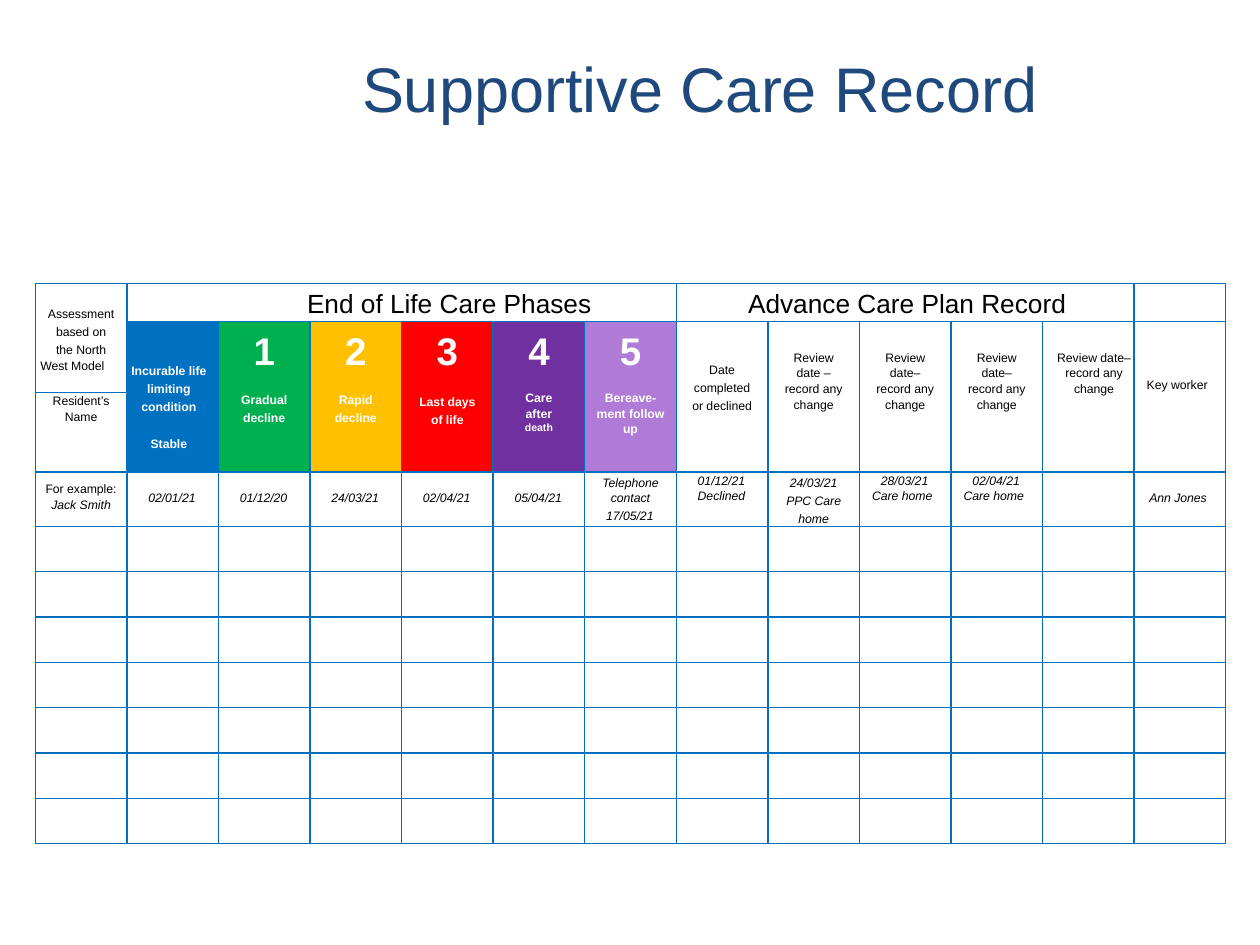
from lxml import etree
from pptx import Presentation
from pptx import util as u
from pptx.dml.color import RGBColor
from pptx.enum import text
from pptx.oxml.ns import qn

THEME = {
    "font": "Arial", "title": "1F497D", "ink": "000000", "white": "FFFFFF",
    "border": "006FC0", "title_size": 36, "band_size": 15,
    "number_size": 22, "body_size": 7, "small_size": 6,
}
LEFT, CENTER = text.PP_ALIGN.LEFT, text.PP_ALIGN.CENTER


def line(words, align=CENTER, left=0, right=None, spacing=1.15, before=0, **style):
    """One paragraph; a centred one is indented equally on both sides."""
    if right is None:
        right = left if align == CENTER else 0
    return {"words": words, "align": align, "left": left, "right": right,
            "spacing": spacing, "before": before, "style": style}


def phase(number, label, indent, spacing, before):
    """Phase number above its label."""
    white = {"color": THEME["white"], "bold": True}
    return [line(number, spacing=29.8, size=THEME["number_size"], **white),
            line(label, left=indent, spacing=spacing, before=before, **white)]


def review(label, left=0.11, right=0.11):
    return [line(label, left=left, right=right)]


def entry(words, left=0.17, **options):
    return line(words, LEFT, left, italic=True, **options)


# Content: (row, column, row span, column span, fill, top margin, paragraphs)
TITLE = "Supportive Care Record"
WHITE_BOLD = {"color": THEME["white"], "bold": True}
BAND = {"align": LEFT, "spacing": 20.4, "size": THEME["band_size"]}
HEADINGS = [
    (0, 0, 2, 1, None, 0, [line("Assessment based on", left=0.06, spacing=10.4),
                           line("the North", left=0.1, spacing=10.2),
                           line("West Model", LEFT, 0.04)]),
    (0, 1, 1, 6, None, 0, [line("End of Life Care Phases", left=1.43, **BAND)]),
    (0, 7, 1, 5, None, 0, [line("Advance Care Plan Record", left=0.57, **BAND)]),
    (2, 0, 1, 1, None, 0, [line("Resident’s", left=0.05), line("Name", left=0.1)]),
]
# Headings from the second column on, each two rows high: (fill, top margin, paragraphs)
COLUMN_HEADINGS = [
    ("0070C0", 0.31, [line("Incurable life limiting condition", right=0.06,
                           spacing=10.3, **WHITE_BOLD),
                      line("Stable", right=0.06, spacing=10.3, before=10.4, **WHITE_BOLD)]),
    ("00B050", 0, phase("1", "Gradual decline", 0.08, 10.3, 9.1)),
    ("FFC000", 0, phase("2", "Rapid decline", 0.09, 10.3, 9.1)),
    ("FF0000", 0, phase("3", "Last days of life", 0.12, 10.3, 10.3)),
    ("7030A0", 0, phase("4", ["Care after ", ("death", THEME["small_size"])], 0.2, 1.15, 9)),
    ("B07BD7", 0, phase("5", "Bereave-ment follow up", 0.08, 1.15, 9)),
    (None, 0.3, [line("Date completed or declined", left=0.1, spacing=10.3)]),
    (None, 0.22, review("Review date – record any change")),
    (None, 0.22, review("Review date– record any change")),
    (None, 0.22, review("Review date– record any change")),
    (None, 0.22, review("Review date– record any change", 0.09, 0)),
    (None, 0.44, [line("Key worker", LEFT, 0.1)]),
]
PHASE_DATES = ["02/01/21", "01/12/20", "24/03/21", "02/04/21", "05/04/21"]
# Example resident: (top margin, paragraphs) for each column
EXAMPLE = [
    (0.07, [line("For example:"), line("Jack Smith", italic=True)]),
    *[(0.14, [entry(date)]) for date in PHASE_DATES],
    (0, [line("Telephone", left=0.05, spacing=10.2, italic=True),
         line("contact", left=0.1, italic=True),
         entry("17/05/21", spacing=10.3)]),
    (0, [entry("01/12/21"), entry("Declined")]),
    (0, [line("24/03/21", left=0.1, spacing=10.2, italic=True),
         line("PPC Care home", left=0.09, spacing=10.3, before=0.3, italic=True)]),
    (0, [entry("28/03/21"), entry("Care home", 0.1)]),
    (0, [entry("02/04/21"), entry("Care home", 0.1)]),
    (0, []),
    (0.14, [entry("Ann Jones", 0.12)]),
]
ROW_HEIGHTS = [0.29, 0.56, 0.63, 0.43] + [0.36] * 7
COLUMN_COUNT, TABLE_WIDTH = 13, 9.45


def format_run(run, size, color=THEME["ink"], bold=False, italic=False):
    run.font.name = THEME["font"]
    run.font.size = u.Pt(size)
    run.font.bold, run.font.italic = bold, italic
    run.font.color.rgb = RGBColor.from_string(color)


def write(text_frame, lines):
    for index, item in enumerate(lines):
        paragraph = text_frame.paragraphs[0] if index == 0 else text_frame.add_paragraph()
        paragraph.alignment = item["align"]
        spacing = item["spacing"]
        paragraph.line_spacing = spacing if spacing < 3 else u.Pt(spacing)
        if item["before"]:
            paragraph.space_before = u.Pt(item["before"])
        properties = paragraph._p.get_or_add_pPr()
        properties.set("marL", str(u.Inches(item["left"])))
        properties.set("marR", str(u.Inches(item["right"])))
        style = {"size": THEME["body_size"], **item["style"]}
        words = item["words"] if isinstance(item["words"], list) else [item["words"]]
        for part in words:
            label, size = part if isinstance(part, tuple) else (part, style["size"])
            run = paragraph.add_run()
            run.text = label
            format_run(run, **{**style, "size": size})


def set_borders(cell):
    properties = cell._tc.get_or_add_tcPr()
    for index, side in enumerate(("lnL", "lnR", "lnT", "lnB")):
        border = etree.Element(qn(f"a:{side}"), w=str(u.Pt(1)))
        fill = etree.SubElement(border, qn("a:solidFill"))
        etree.SubElement(fill, qn("a:srgbClr"), val=THEME["border"])
        properties.insert(index, border)


def main():
    presentation = Presentation()
    presentation.slide_width, presentation.slide_height = u.Inches(10), u.Inches(7.5)
    slide = presentation.slides.add_slide(presentation.slide_layouts[6])

    # Title
    title = slide.shapes.add_textbox(u.Inches(1.46), u.Inches(0.34), u.Inches(8.19), u.Inches(0.71))
    title.text_frame.word_wrap = True
    title.text_frame.vertical_anchor = text.MSO_ANCHOR.MIDDLE
    write(title.text_frame, [line(TITLE, spacing=1.0, size=THEME["title_size"],
                                  color=THEME["title"])])

    # Table grid
    table = slide.shapes.add_table(len(ROW_HEIGHTS), COLUMN_COUNT, u.Inches(0.28), u.Inches(2.25),
                                   u.Inches(TABLE_WIDTH), u.Inches(sum(ROW_HEIGHTS))).table
    table.first_row = table.horz_banding = False
    for column in table.columns:
        column.width = u.Inches(TABLE_WIDTH / COLUMN_COUNT)
    for row, height in zip(table.rows, ROW_HEIGHTS):
        row.height = u.Inches(height)
        for cell in row.cells:
            cell.margin_left = cell.margin_right = cell.margin_top = cell.margin_bottom = 0
            cell.fill.background()
            set_borders(cell)

    # Headings and example row
    cells = HEADINGS + [(1, column, 2, 1, *heading)
                        for column, heading in enumerate(COLUMN_HEADINGS, 1)]
    cells += [(3, column, 1, 1, None, *example) for column, example in enumerate(EXAMPLE)]
    for row, column, row_span, column_span, fill, top, lines in cells:
        cell = table.cell(row, column)
        if row_span * column_span > 1:
            cell.merge(table.cell(row + row_span - 1, column + column_span - 1))
        cell.margin_top = u.Inches(top)
        if fill:
            cell.fill.solid()
            cell.fill.fore_color.rgb = RGBColor.from_string(fill)
        write(cell.text_frame, lines)
    table.cell(0, 0).vertical_anchor = text.MSO_ANCHOR.MIDDLE

    presentation.save("out.pptx")


if __name__ == "__main__":
    main()
